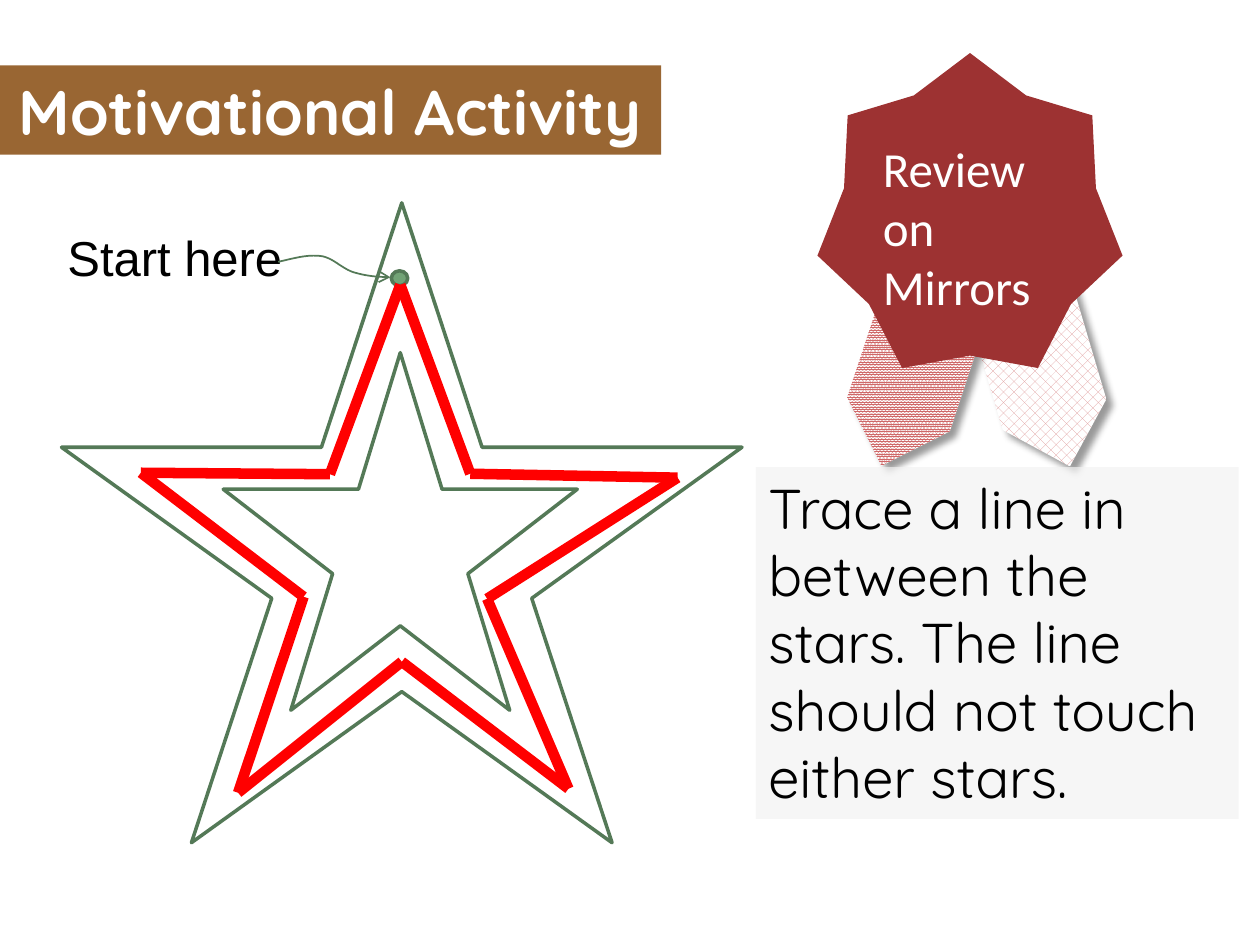
from itertools import pairwise

from lxml import etree
from pptx import Presentation
from pptx import util as u
from pptx.dml.color import RGBColor
from pptx.enum import dml, shapes, text
from pptx.oxml.ns import qn

Kind = shapes.MSO_SHAPE
Fill = dml.MSO_PATTERN

WHITE = RGBColor(0xFF, 0xFF, 0xFF)
BLACK = RGBColor(0x00, 0x00, 0x00)
BROWN = RGBColor(0x99, 0x66, 0x33)
MAROON = RGBColor(0x9D, 0x32, 0x32)
ROSE = RGBColor(0xCF, 0x68, 0x68)
PINK = RGBColor(0xDE, 0x98, 0x98)
GREEN = RGBColor(0x54, 0x79, 0x57)
LEAF = RGBColor(0x72, 0xA3, 0x76)
RED = RGBColor(0xFF, 0x00, 0x00)
GRAY = RGBColor(0xF2, 0xF2, 0xF2)

TRACE = [(6.83, 1.65), (5.41, 5.47), (1.6, 5.44), (4.88, 7.94), (3.56, 11.89),
         (6.86, 9.25), (10.22, 11.81), (8.58, 7.98), (12.42, 5.54), (8.24, 5.46)]
CURVE = [(4.37, 1.19), (4.67, 1.12), (4.95, 1.04), (5.21, 1.07), (5.46, 1.09),
         (5.64, 1.32), (5.89, 1.4), (6.12, 1.47), (6.38, 1.5), (6.63, 1.5)]


def cms(*nums):
    return [u.Cm(n) for n in nums]


def draw(slide, kind, box, fill=None, line=None):
    item = slide.shapes.add_shape(kind, *cms(*box))
    item.shadow.inherit = False
    if fill is None:
        item.fill.background()
    else:
        item.fill.solid()
        item.fill.fore_color.rgb = fill
    if line is None:
        item.line.fill.background()
    else:
        item.line.color.rgb = line
        item.line.width = u.Pt(2)
    return item


def write(item, words, face, size, color, bold=False, align=text.PP_ALIGN.LEFT):
    frame = item.text_frame
    frame.word_wrap = True
    frame.vertical_anchor = text.MSO_ANCHOR.TOP
    frame.text = words
    para = frame.paragraphs[0]
    para.alignment = align
    font = para.font
    font.name, font.size, font.bold = face, u.Pt(size), bold
    font.color.rgb = color
    return para


def shade(item):
    effects = item._element.spPr.find(qn("a:effectLst"))
    outer = etree.SubElement(effects, qn("a:outerShdw"), blurRad=str(u.Pt(4)),
                             dist=str(u.Pt(5)), dir="2700000", rotWithShape="0")
    tint = etree.SubElement(outer, qn("a:srgbClr"), val=str(BLACK))
    etree.SubElement(tint, qn("a:alpha"), val="40000")


def title(slide, left, top, width, height):
    head = slide.shapes.title
    head.left, head.top, head.width, head.height = cms(left, top, width, height)
    head.fill.solid()
    head.fill.fore_color.rgb = BROWN
    write(head, "Motivational Activity", "Quicksand", 36, WHITE, True, text.PP_ALIGN.CENTER)
    head.text_frame.vertical_anchor = text.MSO_ANCHOR.MIDDLE
    head.text_frame.auto_size = text.MSO_AUTO_SIZE.NONE


def badge(slide, left, top, width, height):
    tails = [(1.91, 4.87, 4.95, 73.5, "pct40", PINK),
             (-0.12, 5.28, 4.11, 108.3, "pct90", ROSE)]
    for x, y, size, turn, weave, color in tails:
        tail = draw(slide, Kind.PENTAGON, (left + x, top + y, size, 2.18))
        tail.rotation = turn
        tail.fill.patterned()
        tail.fill.pattern = Fill.from_xml(weave)
        tail.fill.fore_color.rgb = color
        tail.fill.back_color.rgb = WHITE
        shade(tail)
    star = draw(slide, Kind.STAR_7_POINT, (left, top, width, height), MAROON)
    star.adjustments[0] = 0.413
    label = slide.shapes.add_textbox(*cms(left + 1.07, top + 1.6, 4.27, 4.34))
    write(label, "Review on Mirrors", "Calibri", 28, WHITE)


def bezier(knots, steps=12):
    dots = [knots[0]]
    for i in range(0, len(knots) - 1, 3):
        a, b, c, d = knots[i:i + 4]
        for n in range(1, steps + 1):
            t = n / steps
            s = 1 - t
            dots.append(tuple(s**3 * p + 3 * s * s * t * q + 3 * s * t * t * r + t**3 * v
                              for p, q, r, v in zip(a, b, c, d)))
    return dots


def maze(slide, left, top, width, height):
    def shift(dots):
        return [(u.Cm(left + x), u.Cm(top + y)) for x, y in dots]

    draw(slide, Kind.STAR_5_POINT, (left, top, width, height), line=GREEN)
    draw(slide, Kind.STAR_5_POINT, (left + 3.26, top + 3.02, 7.14, 7.21), line=GREEN)

    label = slide.shapes.add_textbox(*cms(left - 0.13, top + 0.2, 5.33, 1.85))
    para = write(label, "Start here", "Arial", 28, BLACK)
    para.line_spacing = 1.15
    para.space_after = u.Pt(10)

    draw(slide, Kind.OVAL, (left + 6.65, top + 1.37, 0.33, 0.3), LEAF, GREEN)

    for start, end in pairwise(shift(TRACE + TRACE[:1])):
        line = slide.shapes.add_connector(shapes.MSO_CONNECTOR.STRAIGHT, *start, *end)
        line.line.color.rgb = RED
        line.line.width = u.Pt(6)
        etree.SubElement(line._element.spPr, qn("a:effectLst"))

    first, *rest = shift(bezier(CURVE))
    path = slide.shapes.build_freeform(*first)
    path.add_line_segments(rest, close=False)
    arrow = path.convert_to_shape()
    arrow.shadow.inherit = False
    arrow.fill.background()
    arrow.line.color.rgb = GREEN
    arrow.line.width = u.Pt(1)
    stroke = arrow._element.spPr.find(qn("a:ln"))
    etree.SubElement(stroke, qn("a:tailEnd"), type="arrow")


def note(slide, *box):
    panel = draw(slide, Kind.RECTANGLE, box, GRAY)
    tint = panel._element.spPr.find(".//" + qn("a:srgbClr"))
    etree.SubElement(tint, qn("a:alpha"), val="68000")
    write(panel, "Trace a line in between the stars. The line should not touch either stars.",
          "Quicksand", 32, BLACK)


def main():
    deck = Presentation()
    deck.slide_width, deck.slide_height = cms(25.4, 19.05)
    slide = deck.slides.add_slide(deck.slide_layouts[5])
    title(slide, -0.03, 1.32, 13.36, 1.8)
    badge(slide, 16.48, 1.07, 6.15, 6.35)
    maze(slide, 1.24, 4.09, 13.72, 12.9)
    note(slide, 15.24, 9.42, 9.73, 7.09)
    deck.save("out.pptx")


if __name__ == "__main__":
    main()
